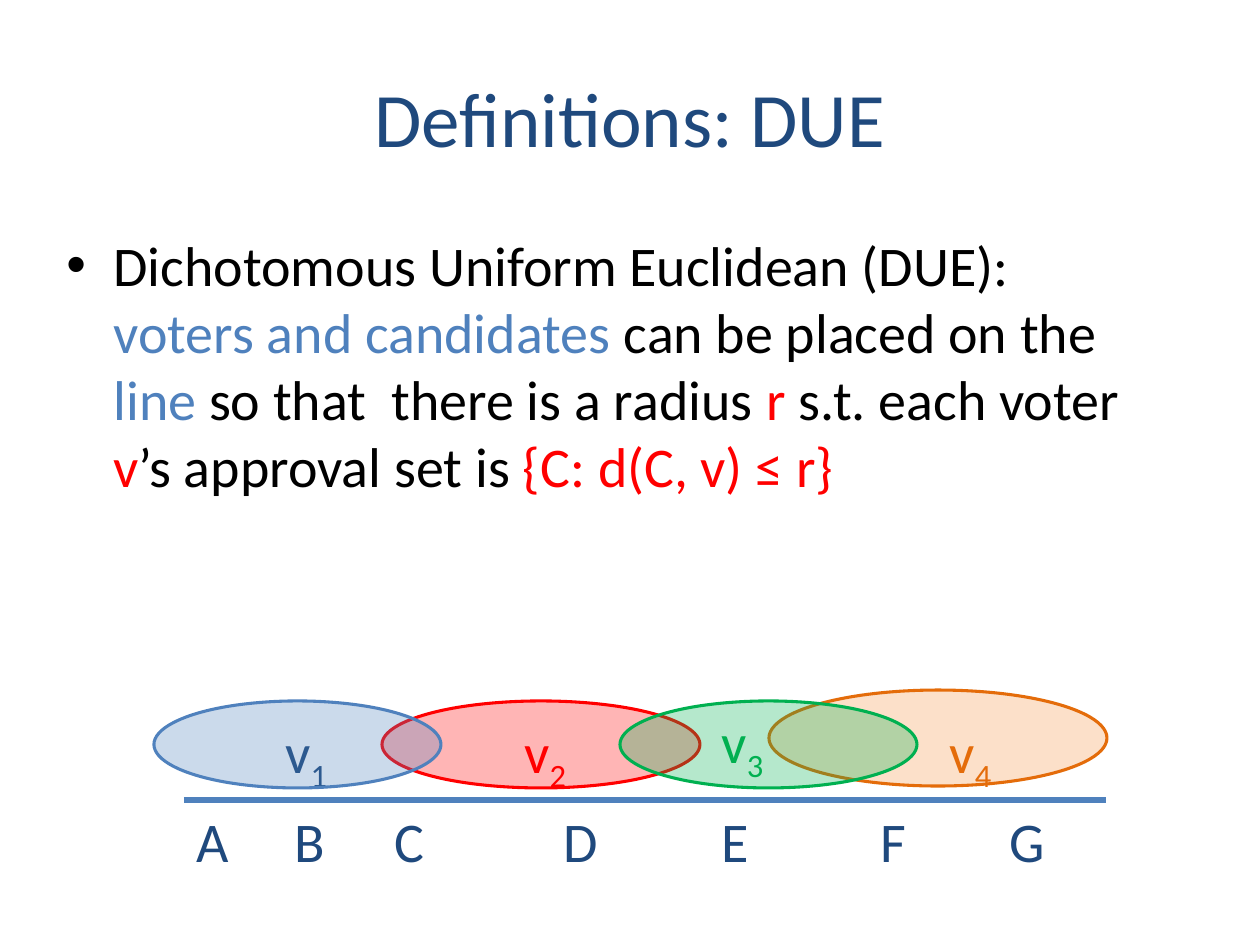
from dataclasses import dataclass

from lxml import etree
from pptx import Presentation
from pptx import util as u
from pptx.dml.color import RGBColor
from pptx.enum import shapes, text
from pptx.oxml.ns import qn

EMU_PER_PX = 914400 / 126


@dataclass(frozen=True)
class Theme:
    font: str = "Calibri"
    title_size: int = 44
    body_size: int = 32
    outline: float = 1.75
    axis_width: int = 3
    opacity: int = 29
    black: str = "000000"
    navy: str = "1F497D"
    blue: str = "4F81BD"
    red: str = "FF0000"
    green: str = "00B050"
    orange: str = "F79646"
    dark_orange: str = "E46C0A"


def px(*lengths):
    return [u.Emu(round(n * EMU_PER_PX)) for n in lengths]


class Board:
    def __init__(self, slide, theme):
        self.s = slide
        self.t = theme

    def style(self, r, color, size):
        r.font.name = self.t.font
        r.font.size = u.Pt(size)
        r.font.color.rgb = RGBColor.from_string(color)

    def text(self, box, parts, size=None, wrap=False):
        """Add a text box; parts are (text, colour) pairs, "\\n" is a line break."""
        sp = self.s.shapes.add_textbox(*px(*box))
        tf = sp.text_frame
        tf.word_wrap = wrap
        p = tf.paragraphs[0]
        for words, color in parts:
            if words == "\n":
                p.add_line_break()
                continue
            r = p.add_run()
            r.text = words
            self.style(r, color, size or self.t.body_size)
        return sp

    def title(self, box, words):
        sp = self.text(box, [(words, self.t.navy)], self.t.title_size, wrap=True)
        sp.text_frame.vertical_anchor = text.MSO_ANCHOR.MIDDLE
        sp.text_frame.paragraphs[0].alignment = text.PP_ALIGN.CENTER

    def bullet(self, box, parts, indent):
        sp = self.text(box, parts, wrap=True)
        pPr = sp.text_frame.paragraphs[0]._p.get_or_add_pPr()
        margin = px(indent)[0]
        pPr.set("marL", str(margin))
        pPr.set("indent", str(-margin))
        etree.SubElement(pPr, qn("a:buFont")).set("typeface", "Arial")
        etree.SubElement(pPr, qn("a:buChar")).set("char", "•")

    def voter(self, x, y, number, color):
        sp = self.text((x, y, 71, 81), [("v", color), (str(number), color)])
        sub = sp.text_frame.paragraphs[0].runs[1]
        sub.font._element.set("baseline", "-25000")

    def ellipse(self, box, fill, line):
        sp = self.s.shapes.add_shape(shapes.MSO_SHAPE.OVAL, *px(*box))
        sp.shadow.inherit = False
        sp.fill.solid()
        sp.fill.fore_color.rgb = RGBColor.from_string(fill)
        clr = sp.fill._xPr.find(qn("a:solidFill"))[0]
        etree.SubElement(clr, qn("a:alpha")).set("val", str(self.t.opacity * 1000))
        sp.line.color.rgb = RGBColor.from_string(line)
        sp.line.width = u.Pt(self.t.outline)

    def line(self, x1, y1, x2, y2):
        c = self.s.shapes.add_connector(
            shapes.MSO_CONNECTOR.STRAIGHT, *px(x1, y1, x2, y2))
        c.line.color.rgb = RGBColor.from_string(self.t.blue)
        c.line.width = u.Pt(self.t.axis_width)
        etree.SubElement(c._element.spPr, qn("a:effectLst"))


def main():
    prs = Presentation()
    prs.slide_width, prs.slide_height = px(1260, 945)
    t = Theme()
    b = Board(prs.slides.add_slide(prs.slide_layouts[6]), t)

    # Definition
    b.bullet((54, 224, 1134, 659), [
        ("Dichotomous Uniform Euclidean (DUE): ", t.black),
        ("\n", t.black),
        ("voters and candidates", t.blue),
        (" can be placed on the ", t.black),
        ("line", t.blue),
        (" so that  there is a radius ", t.black),
        ("r ", t.red),
        ("s.t. each voter ", t.black),
        ("v", t.red),
        ("’s approval set is", t.black),
        (" {C: d(C, v) ≤ r}", t.red),
    ], indent=47)

    # Approval ranges behind the labels
    top, height = 701, 87
    b.ellipse((382, top, 318, height), t.red, t.red)
    b.ellipse((769, 690, 338, 96), t.orange, t.dark_orange)

    b.title((63, 38, 1134, 158), "Definitions: DUE")

    # Line with the candidates below it
    axis_y = 800
    b.line(184, axis_y, 1106, axis_y)
    candidates = [("A", 184, 58), ("B", 282, 57), ("C", 382, 55), ("D", 551, 60),
                  ("E", 709, 53), ("F", 868, 52), ("G", 997, 62)]
    for name, x, width in candidates:
        b.text((x, axis_y, width, 81), [(name, t.navy)])

    # Voters
    voters = [(273, 711, t.navy), (512, 711, t.red),
              (709, 701, t.green), (937, 711, t.dark_orange)]
    for number, (x, y, color) in enumerate(voters, 1):
        b.voter(x, y, number, color)

    # Approval ranges in front of the labels
    b.ellipse((154, top, 287, height), t.blue, t.blue)
    b.ellipse((620, top, 297, height), t.green, t.green)

    prs.save("out.pptx")


if __name__ == "__main__":
    main()
